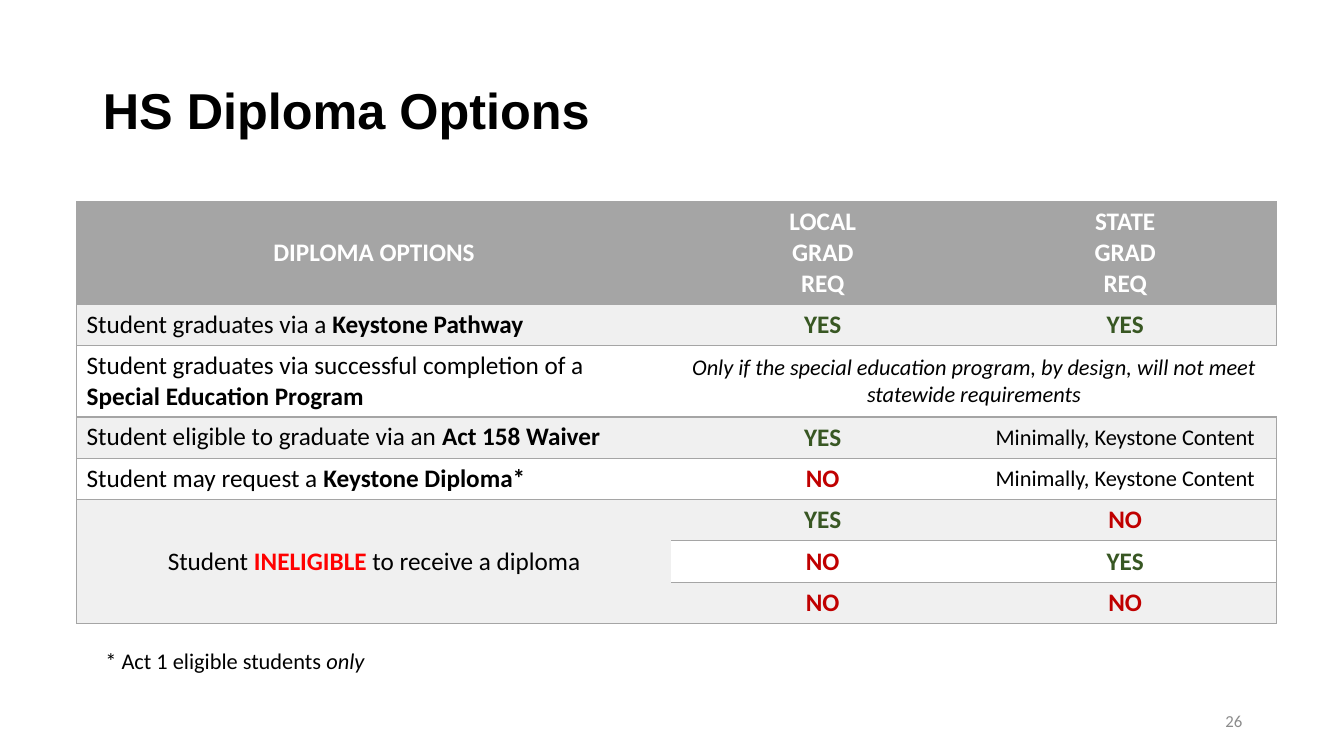
from lxml.etree import SubElement
from pptx import Presentation
from pptx.dml.color import RGBColor
from pptx.enum.text import MSO_ANCHOR, MSO_AUTO_SIZE, PP_ALIGN
from pptx.oxml.ns import qn
from pptx.util import Inches, Pt

BLACK = RGBColor(0x00, 0x00, 0x00)
WHITE = RGBColor(0xFF, 0xFF, 0xFF)
GRAY = RGBColor(0xA5, 0xA5, 0xA5)
BAND = RGBColor(0xF0, 0xF0, 0xF0)
GREEN = RGBColor(0x38, 0x57, 0x23)
DARK_RED = RGBColor(0xC0, 0x00, 0x00)
RED = RGBColor(0xFF, 0x00, 0x00)
NUMBER_GRAY = RGBColor(0x8C, 0x8C, 0x8C)
PLAIN_TABLE = "{2D5ABB26-0587-4C30-8999-92F81FD0307C}"


class SlideBuilder:
    """Holds the style and the current slide."""

    def __init__(self, presentation):
        self.body_font = "Calibri"
        self.title_font = "Arial"
        self.slide = presentation.slides.add_slide(presentation.slide_layouts[5])

    def fill_text(self, text_frame, paragraphs, size, align, color=BLACK):
        """Each paragraph is a list of (text, font settings) runs."""
        for index, runs in enumerate(paragraphs):
            paragraph = text_frame.paragraphs[0] if index == 0 else text_frame.add_paragraph()
            paragraph.alignment = align
            for text, settings in runs:
                run = paragraph.add_run()
                run.text = text
                font = run.font
                font.name = self.body_font
                font.size = Pt(settings.get("size", size))
                font.bold = settings.get("bold", False)
                font.italic = settings.get("italic", False)
                font.color.rgb = settings.get("color", color)

    def title(self, text, left, top, width, height):
        shape = self.slide.shapes.title
        shape.left, shape.top = Inches(left), Inches(top)
        shape.width, shape.height = Inches(width), Inches(height)
        text_frame = shape.text_frame
        text_frame.text = text
        text_frame.vertical_anchor = MSO_ANCHOR.MIDDLE
        paragraph = text_frame.paragraphs[0]
        paragraph.alignment = PP_ALIGN.LEFT
        paragraph.line_spacing = 0.9
        font = paragraph.runs[0].font
        font.name, font.size, font.bold = self.title_font, Pt(36), True
        font.color.rgb = BLACK

    def text_box(self, runs, left, top, width, height, size, align,
                 color=BLACK, anchor=MSO_ANCHOR.TOP):
        shape = self.slide.shapes.add_textbox(
            Inches(left), Inches(top), Inches(width), Inches(height))
        text_frame = shape.text_frame
        text_frame.word_wrap = True
        text_frame.auto_size = MSO_AUTO_SIZE.NONE
        text_frame.vertical_anchor = anchor
        self.fill_text(text_frame, [runs], size, align, color)

    def table(self, left, top, column_widths, row_heights):
        frame = self.slide.shapes.add_table(
            len(row_heights), len(column_widths), Inches(left), Inches(top),
            Inches(sum(column_widths)), Inches(sum(row_heights)))
        table = frame.table
        table.first_row = table.horz_banding = False
        table._tbl.tblPr.find(qn("a:tableStyleId")).text = PLAIN_TABLE
        for column, width in zip(table.columns, column_widths):
            column.width = Inches(width)
        for row, height in zip(table.rows, row_heights):
            row.height = Inches(height)
        return table

    def cell(self, cell, paragraphs, fill, sides, align=PP_ALIGN.CENTER,
             anchor=MSO_ANCHOR.MIDDLE):
        properties = cell._tc.get_or_add_tcPr()
        for side in sides:
            line = SubElement(properties, qn(f"a:ln{side}"), w=str(Pt(1)))
            solid = SubElement(line, qn("a:solidFill"))
            SubElement(solid, qn("a:srgbClr"), val=str(GRAY))
        cell.fill.solid()
        cell.fill.fore_color.rgb = fill
        cell.vertical_anchor = anchor
        self.fill_text(cell.text_frame, paragraphs, 18, align)


def header(*lines):
    return [[(line, {"bold": True, "color": WHITE})] for line in lines]


def option(start, name):
    return [[(start, {}), (name, {"bold": True})]]


# Table content
YES = [[("YES", {"bold": True, "color": GREEN})]]
NO = [[("NO", {"bold": True, "color": DARK_RED})]]
KEYSTONE = [[("Minimally, Keystone Content", {"size": 16})]]
SPECIAL = [[("Only if the special education program, by design, will not meet "
             "statewide requirements", {"size": 16, "italic": True})]]
INELIGIBLE = [[("Student ", {}), ("INELIGIBLE", {"bold": True, "color": RED}),
               (" to receive a diploma", {})]]
ROWS = [
    (header("DIPLOMA OPTIONS"), header("LOCAL", "GRAD", "REQ"),
     header("STATE", "GRAD", "REQ")),
    (option("Student graduates via a ", "Keystone Pathway"), YES, YES),
    (option("Student graduates via successful completion of a ",
            "Special Education Program"), SPECIAL, []),
    (option("Student eligible to graduate via an ", "Act 158 Waiver"), YES, KEYSTONE),
    (option("Student may request a ", "Keystone Diploma*"), NO, KEYSTONE),
    (INELIGIBLE, YES, NO),
    ([], NO, YES),
    ([], NO, NO),
]
SIDES = ["LTB", "TB", "RTB"]


def main():
    presentation = Presentation()
    presentation.slide_width, presentation.slide_height = Inches(13.33), Inches(7.5)
    builder = SlideBuilder(presentation)

    # Title
    builder.title("HS Diploma Options", 0.92, 0.4, 11.5, 1.45)

    # Diploma table
    heights = [1.01, 0.41, 0.71] + [0.41] * 5
    table = builder.table(0.76, 2, [5.9, 3, 3], heights)
    table.cell(2, 1).merge(table.cell(2, 2))
    table.cell(5, 0).merge(table.cell(7, 0))
    for row, contents in enumerate(ROWS):
        fill = GRAY if row == 0 else BAND if row % 2 else WHITE
        for column, paragraphs in enumerate(contents):
            is_option = column == 0 and 1 <= row <= 4
            builder.cell(
                table.cell(row, column), paragraphs, fill, SIDES[column],
                PP_ALIGN.LEFT if is_option else PP_ALIGN.CENTER,
                MSO_ANCHOR.TOP if is_option else MSO_ANCHOR.MIDDLE)

    # Footnote and slide number
    builder.text_box([("* Act 1 eligible students ", {}), ("only", {"italic": True})],
                     0.76, 6.37, 3.14, 0.37, 16, PP_ALIGN.CENTER)
    builder.text_box([("26", {})], 9.42, 6.95, 3, 0.4, 12, PP_ALIGN.RIGHT,
                     NUMBER_GRAY, MSO_ANCHOR.MIDDLE)

    presentation.save("out.pptx")


if __name__ == "__main__":
    main()
